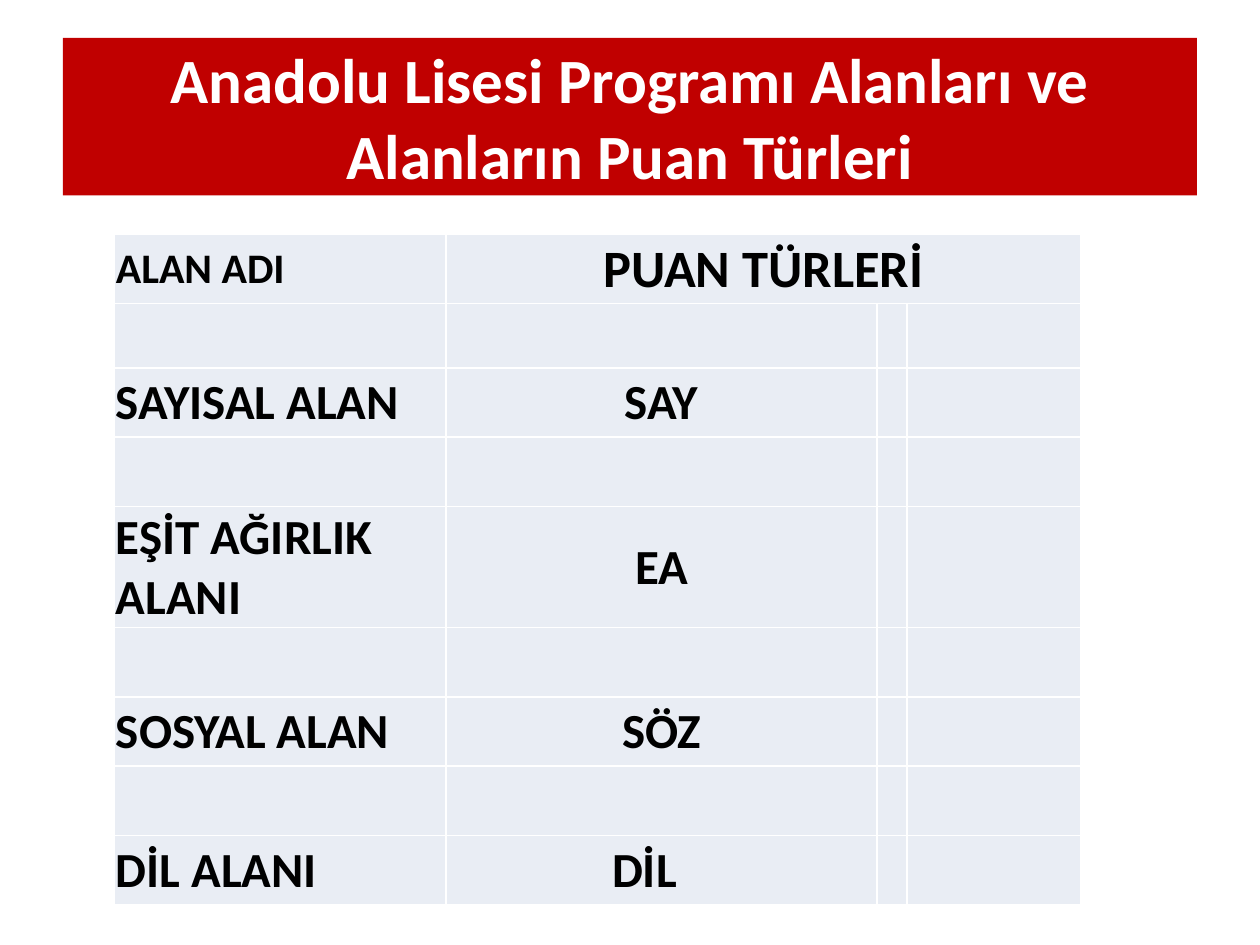
"""Build a slide with the score types of the Anadolu Lisesi fields."""
from lxml import etree
from pptx import Presentation
from pptx.dml.color import RGBColor
from pptx.enum.shapes import MSO_SHAPE
from pptx.enum.text import MSO_ANCHOR, PP_ALIGN
from pptx.oxml.ns import qn
from pptx.util import Inches, Pt

RECTANGLE = MSO_SHAPE.RECTANGLE
MIDDLE = MSO_ANCHOR.MIDDLE
LEFT, CENTER = PP_ALIGN.LEFT, PP_ALIGN.CENTER

FONT = "Calibri"
RED, WHITE, BLACK, PALE_BLUE = "C00000", "FFFFFF", "000000", "E9EDF4"
TITLE = "Anadolu Lisesi Programı Alanları ve Alanların Puan Türleri"
COLUMN_WIDTHS = [2.63, 3.42, 0.05, 1.38]
ROW_HEIGHTS = [0.55, 0.51] + [0.55] * 7
FIELDS = [
    ("SAYISAL ALAN", "SAY"),
    ("EŞİT AĞIRLIK ALANI", "EA"),
    ("SOSYAL ALAN", "SÖZ"),
    ("DİL ALANI", "DİL"),
]
CELL_FORMAT = {
    "vertical_anchor": MIDDLE,
    "margin_left": Inches(0.01),
    "margin_right": Inches(0.01),
    "margin_top": Inches(0.01),
    "margin_bottom": 0,
}


def color(value):
    """Turn a hex string into a colour."""
    return RGBColor.from_string(value)


def set_all(target, values):
    """Set every attribute named in a dict."""
    for name, value in values.items():
        setattr(target, name, value)


def write(frame, text, size, text_color, align):
    """Write one bold paragraph into a text frame."""
    para = frame.paragraphs[0]
    para.alignment = align
    span = para.add_run()
    span.text = text
    set_all(span.font, {"name": FONT, "size": Pt(size), "bold": True})
    span.font.color.rgb = color(text_color)


def add_title(page):
    """Add the red title band."""
    box = page.shapes.add_shape(
        RECTANGLE, Inches(0.5), Inches(0.3), Inches(9), Inches(1.25))
    box.shadow.inherit = False
    box.fill.solid()
    box.fill.fore_color.rgb = color(RED)
    box.line.fill.background()
    set_all(box.text_frame, {"word_wrap": True, "vertical_anchor": MIDDLE})
    write(box.text_frame, TITLE, 36, WHITE, CENTER)


def style_cell(cell):
    """Give a cell thin white borders and a pale fill."""
    properties = cell._tc.get_or_add_tcPr()
    for side in ("a:lnL", "a:lnR", "a:lnT", "a:lnB"):
        line = etree.SubElement(properties, qn(side), w=str(Pt(1)))
        fill = etree.SubElement(line, qn("a:solidFill"))
        etree.SubElement(fill, qn("a:srgbClr"), val=WHITE)
    cell.fill.solid()
    cell.fill.fore_color.rgb = color(PALE_BLUE)


def write_cell(cell, text, size, align):
    """Write black text into a cell with narrow margins."""
    set_all(cell, CELL_FORMAT)
    write(cell.text_frame, text, size, BLACK, align)


def add_score_table(page):
    """Add the table of fields and their score types."""
    frame = page.shapes.add_table(
        len(ROW_HEIGHTS), len(COLUMN_WIDTHS), Inches(0.91), Inches(1.86),
        Inches(sum(COLUMN_WIDTHS)), Inches(sum(ROW_HEIGHTS)))
    table = frame.table
    set_all(table, {"first_row": False, "horz_banding": False})
    for column, width in zip(table.columns, COLUMN_WIDTHS):
        column.width = Inches(width)
    for row, height in zip(table.rows, ROW_HEIGHTS):
        row.height = Inches(height)
    for cell in table.iter_cells():
        style_cell(cell)
    table.cell(0, 1).merge(table.cell(0, 3))
    write_cell(table.cell(0, 0), "ALAN ADI", 24, LEFT)
    write_cell(table.cell(0, 1), "PUAN TÜRLERİ", 30, CENTER)
    for index, (field, score) in enumerate(FIELDS, start=1):
        write_cell(table.cell(2 * index, 0), field, 28, LEFT)
        write_cell(table.cell(2 * index, 1), score, 28, CENTER)
    table.cell(2 * len(FIELDS), 1).margin_right = Inches(0.28)


def main():
    """Build and save the deck."""
    deck = Presentation()
    set_all(deck, {"slide_width": Inches(10), "slide_height": Inches(7.5)})
    page = deck.slides.add_slide(deck.slide_layouts[6])
    add_title(page)
    add_score_table(page)
    deck.save("out.pptx")


if __name__ == "__main__":
    main()
